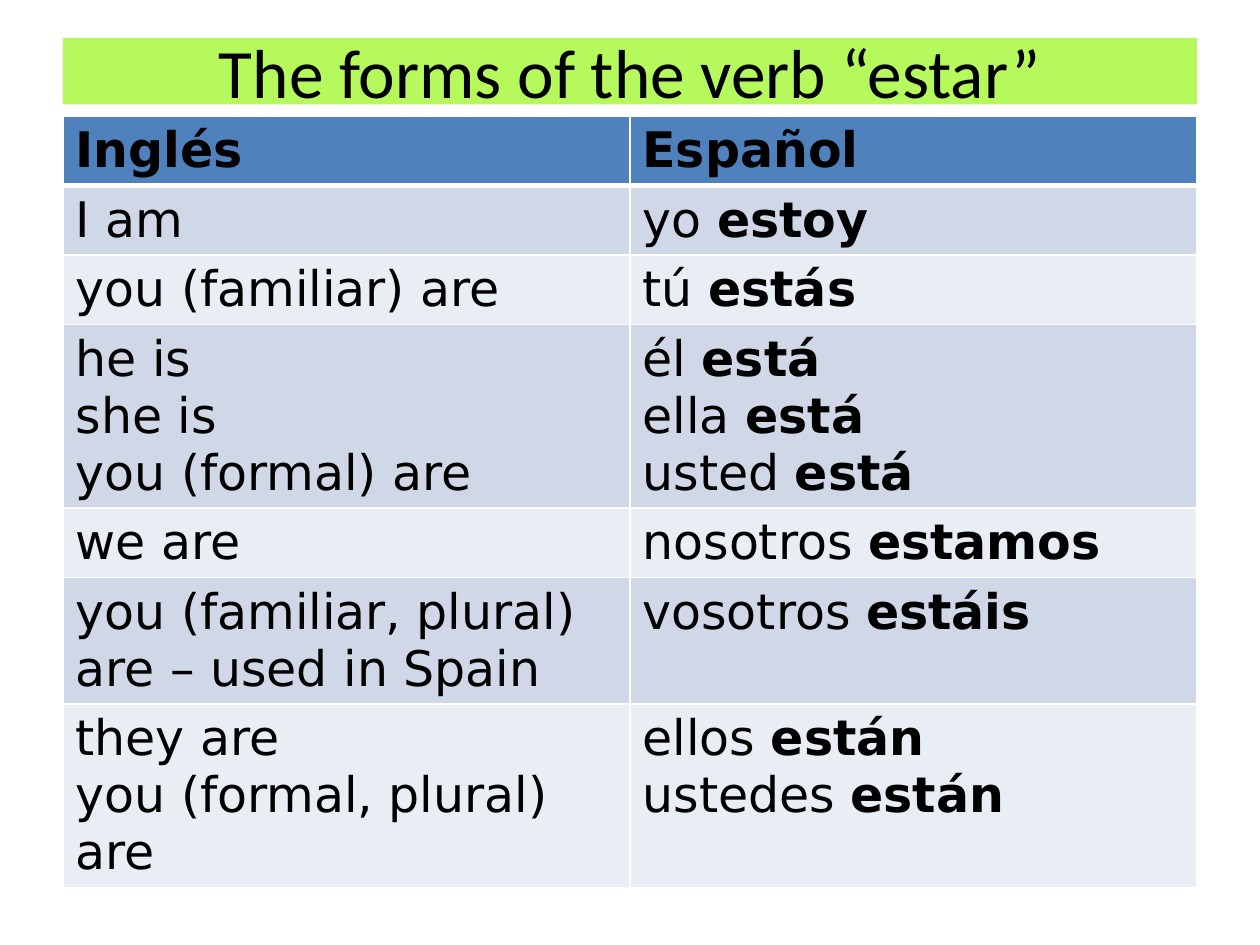
from lxml import etree
from pptx import Presentation
from pptx import util as u
from pptx.dml.color import RGBColor
from pptx.enum import shapes, text
from pptx.oxml import ns

COLORS = {
    "title": "B6F95D",
    "header": "4F81BD",
    "odd": "D0D8E8",
    "even": "E9EDF4",
    "border": "FFFFFF",
    "text": "000000",
}

HEADINGS = ("Inglés", "Español")

# Each row: English lines, then (pronoun, verb form) pairs
FORMS = [
    (["I am"], [("yo", "estoy")]),
    (["you (familiar) are"], [("tú", "estás")]),
    (["he is", "she is", "you (formal) are"],
     [("él", "está"), ("ella", "está"), ("usted", "está")]),
    (["we are"], [("nosotros", "estamos")]),
    (["you (familiar, plural) are – used in Spain"], [("vosotros", "estáis")]),
    (["they are", "you (formal, plural) are"],
     [("ellos", "están"), ("ustedes", "están")]),
]


def color(name):
    return RGBColor.from_string(COLORS[name])


def style_font(font, name, size):
    font.name = name
    font.size = u.Pt(size)
    font.color.rgb = color("text")


def add_title(page, left, top, width, height):
    box = page.shapes.add_shape(shapes.MSO_SHAPE.RECTANGLE, left, top, width, height)
    box.shadow.inherit = False
    box.fill.solid()
    box.fill.fore_color.rgb = color("title")
    box.line.fill.background()
    frame = box.text_frame
    frame.word_wrap = True
    frame.vertical_anchor = text.MSO_ANCHOR.MIDDLE
    para = frame.paragraphs[0]
    para.text = "The forms of the verb “estar”"
    para.alignment = text.PP_ALIGN.CENTER
    style_font(para.font, "Calibri", 39.6)


def set_borders(cell, bottom=1, top=1):
    properties = cell._tc.get_or_add_tcPr()
    for side, points in (("L", 1), ("R", 1), ("T", top), ("B", bottom)):
        line = etree.SubElement(properties, ns.qn(f"a:ln{side}"), w=str(u.Pt(points)))
        fill = etree.SubElement(line, ns.qn("a:solidFill"))
        etree.SubElement(fill, ns.qn("a:srgbClr"), val=COLORS["border"])


def fill_cell(cell, lines, fill):
    """Write lines, each a list of (words, bold) spans, on a plain fill."""
    cell.fill.solid()
    cell.fill.fore_color.rgb = color(fill)
    frame = cell.text_frame
    for index, spans in enumerate(lines):
        para = frame.add_paragraph() if index else frame.paragraphs[0]
        style_font(para.font, "DejaVu Sans", 28)
        for words, bold in spans:
            span = para.add_run()
            span.text = words
            style_font(span.font, "DejaVu Sans", 28)
            span.font.bold = bold


def add_forms_table(page, left, top, width, row_height):
    count = len(FORMS) + 1
    table = page.shapes.add_table(
        count, len(HEADINGS), left, top, width, row_height * count).table
    for row in table.rows:
        row.height = row_height

    # Header row, with a thick rule below
    for cell, heading in zip(table.rows[0].cells, HEADINGS):
        set_borders(cell, bottom=3)
        fill_cell(cell, [[(heading, True)]], "header")

    # Verb forms, in alternating bands
    for number, (english, spanish) in enumerate(FORMS, start=1):
        band = "odd" if number % 2 else "even"
        columns = (
            [[(line, False)] for line in english],
            [[(f"{pronoun} ", False), (verb, True)] for pronoun, verb in spanish],
        )
        for cell, lines in zip(table.rows[number].cells, columns):
            set_borders(cell, top=3 if number == 1 else 1)
            fill_cell(cell, lines, band)


def main():
    deck = Presentation()
    deck.slide_width, deck.slide_height = u.Inches(10), u.Inches(7.5)
    page = deck.slides.add_slide(deck.slide_layouts[6])
    left, width = u.Inches(0.5), u.Inches(9)
    add_title(page, left, u.Inches(0.3), width, u.Inches(0.53))
    add_forms_table(page, left, u.Inches(0.92), width, u.Inches(0.41))
    deck.save("out.pptx")


if __name__ == "__main__":
    main()
